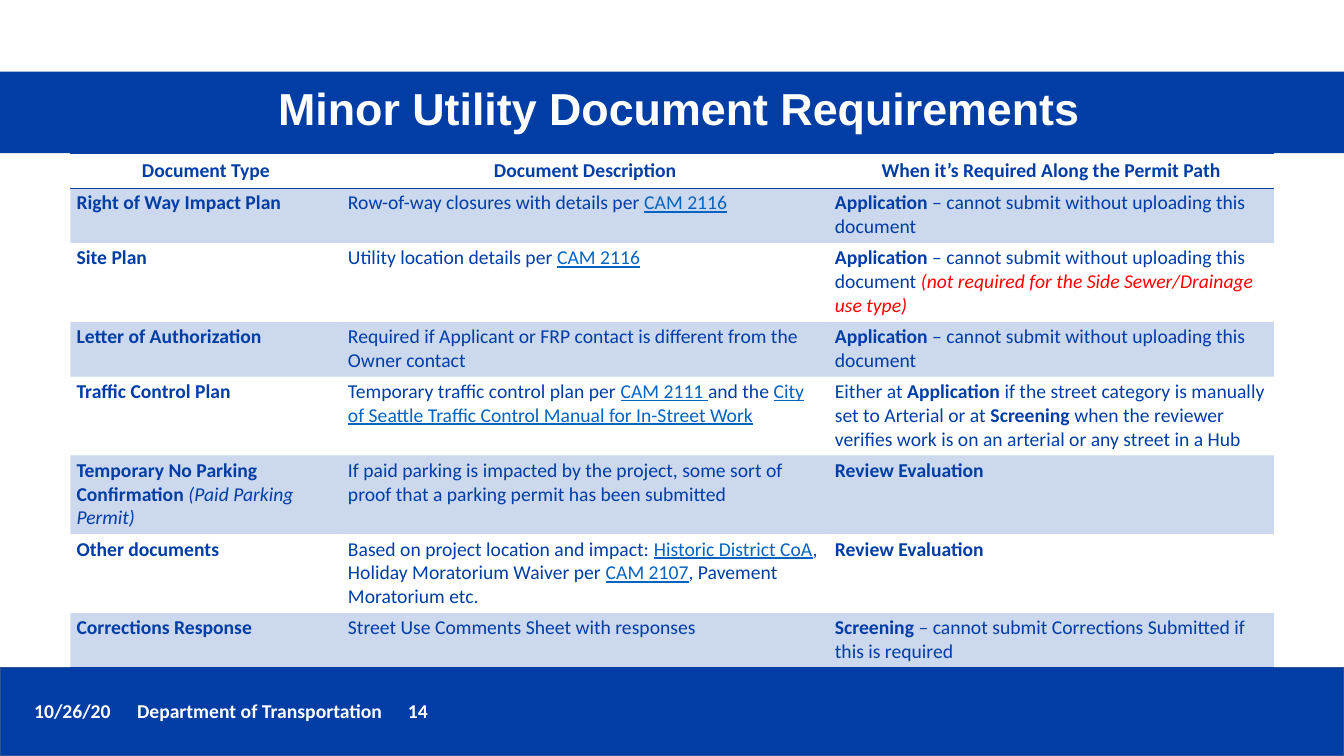
"""Builds the slide on minor utility document requirements."""
import pptx
import pptx.dml.color
import pptx.enum.shapes
import pptx.enum.text
import pptx.oxml
import pptx.oxml.ns
import pptx.util
from lxml import etree

Pt = pptx.util.Pt
ALIGN = pptx.enum.text.PP_ALIGN
MIDDLE = pptx.enum.text.MSO_ANCHOR.MIDDLE
FIXED = pptx.enum.text.MSO_AUTO_SIZE.NONE
COLORS = {"blue": "003DA5", "edge": "31538F", "link": "0563C1", "red": "FF0000", "white": "FFFFFF"}

TITLE = "Minor Utility Document Requirements"
FOOTER = "10/26/20\tDepartment of Transportation\t14"
STOPS = (73.5, 267)
NO_STYLE = "{2D5ABB26-0587-4C30-8999-92F81FD0307C}"

# STYLES_PLACEHOLDER
STYLES = {
    "bold": {"bold": True},
    "plain": {},
    "link": {"color": "link", "underline": True},
    "slant": {"italic": True},
    "note": {"color": "red", "italic": True},
}
HEADS = ("Document Type", "Document Description", "When it’s Required Along the Permit Path")
UPLOAD = [("bold", "Application"), ("plain", " – cannot submit without uploading this document")]
REVIEW = [("bold", "Review Evaluation")]
ROWS = [
    (2, [("bold", "Right of Way Impact Plan")],
     [("plain", "Row-of-way closures with details per "), ("link", "CAM 2116")],
     UPLOAD),
    (3, [("bold", "Site Plan")],
     [("plain", "Utility location details per "), ("link", "CAM 2116")],
     UPLOAD + [("plain", " "), ("note", "(not required for the Side Sewer/Drainage use type)")]),
    (2, [("bold", "Letter of Authorization")],
     [("plain", "Required if Applicant or FRP contact is different from the Owner contact")],
     UPLOAD),
    (3, [("bold", "Traffic Control Plan")],
     [("plain", "Temporary traffic control plan per "), ("link", "CAM 2111 "), ("plain", "and the "),
      ("link", "City of Seattle Traffic Control Manual for In-Street Work")],
     [("plain", "Either at "), ("bold", "Application"),
      ("plain", " if the street category is manually set to Arterial or at"), ("bold", " Screening "),
      ("plain", "when the reviewer verifies work is on an arterial or any street in a Hub")]),
    (3, [("bold", "Temporary No Parking Confirmation "), ("slant", "(Paid Parking Permit)")],
     [("plain", "If paid parking is impacted by the project, some sort of proof "
                "that a parking permit has been submitted")],
     REVIEW),
    (3, [("bold", "Other documents")],
     [("plain", "Based on project location and impact: "), ("link", "Historic District CoA"),
      ("plain", ", Holiday Moratorium Waiver per "), ("link", "CAM 2107"),
      ("plain", ", Pavement Moratorium etc.")],
     REVIEW),
    (2, [("bold", "Corrections Response")],
     [("plain", "Street Use Comments Sheet with responses")],
     [("bold", "Screening"), ("plain", " – cannot submit Corrections Submitted if this is required")]),
]

WIDE, HIGH = 960, 540
COLS = (193.9, 347.8, 318)
LEFT, TOP = 50.2, 109.4
HEAD, LINE, PAD = 25, 17.1, 5


def tint(name):
    return pptx.dml.color.RGBColor.from_string(COLORS[name])


def dress(run, size=14, font="Calibri", color="blue", bold=False, italic=False, underline=False):
    run.font.size, run.font.name = Pt(size), font
    run.font.bold, run.font.italic, run.font.underline = bold, italic, underline
    run.font.color.rgb = tint(color)


def add_bar(slide, top, high, edge=None):
    bar = slide.shapes.add_shape(
        pptx.enum.shapes.MSO_SHAPE.RECTANGLE, 0, Pt(top), Pt(WIDE), Pt(high))
    bar.shadow.inherit = False
    bar.fill.solid()
    bar.fill.fore_color.rgb = tint("blue")
    if edge:
        bar.line.color.rgb = tint(edge)
        bar.line.width = Pt(1)
    else:
        bar.line.fill.background()


def add_footer(slide):
    box = slide.shapes.add_textbox(Pt(17.3), Pt(496), Pt(724), Pt(24.2))
    box.text_frame.word_wrap = True
    para = box.text_frame.paragraphs[0]
    para.text = FOOTER
    for run in para.runs:
        dress(run, color="white", bold=True)
    tabs = etree.SubElement(para._p.get_or_add_pPr(), pptx.oxml.ns.qn("a:tabLst"))
    for stop in STOPS:
        etree.SubElement(tabs, pptx.oxml.ns.qn("a:tab"), pos=str(int(Pt(stop))), algn="l")


def place_title(slide):
    title = slide.shapes.title
    title.left, title.top, title.width, title.height = Pt(43.9), Pt(50.4), Pt(882.7), Pt(58.3)
    frame = title.text_frame
    frame.text = TITLE
    frame.auto_size, frame.vertical_anchor = FIXED, MIDDLE
    para = frame.paragraphs[0]
    para.alignment, para.line_spacing = ALIGN.CENTER, 0.9
    dress(para.runs[0], 32, "Arial", "white", True)
    slide.shapes._spTree.append(title._element)


def fill_cell(cell, parts):
    cell.margin_left = cell.margin_right = Pt(4.5)
    cell.margin_top = cell.margin_bottom = Pt(2.25)
    para = cell.text_frame.paragraphs[0]
    for style, text in parts:
        run = para.add_run()
        run.text = text
        dress(run, **STYLES[style])


def shade(cell):
    cell.fill.solid()
    cell.fill.fore_color.rgb = tint("blue")
    color = cell._tc.tcPr.find(".//" + pptx.oxml.ns.qn("a:srgbClr"))
    etree.SubElement(color, pptx.oxml.ns.qn("a:alpha"), val="20000")


def rule(cell, side):
    line = pptx.oxml.parse_xml(
        f'<a:{side} {pptx.oxml.ns.nsdecls("a")} w="{int(Pt(1))}"><a:solidFill>'
        f'<a:srgbClr val="{COLORS["blue"]}"/></a:solidFill></a:{side}>')
    cell._tc.get_or_add_tcPr().insert(0, line)


def add_grid(slide):
    highs = [HEAD] + [PAD + LINE * row[0] for row in ROWS]
    frame = slide.shapes.add_table(
        len(highs), len(COLS), Pt(LEFT), Pt(TOP), Pt(sum(COLS)), Pt(sum(highs)))
    grid = frame.table
    grid.horz_banding = False
    grid._tbl.tblPr.find(pptx.oxml.ns.qn("a:tableStyleId")).text = NO_STYLE
    for col, wide in zip(grid.columns, COLS):
        col.width = Pt(wide)
    for row, high in zip(grid.rows, highs):
        row.height = Pt(high)
    for c, head in enumerate(HEADS):
        cell = grid.cell(0, c)
        fill_cell(cell, [("bold", head)])
        cell.vertical_anchor = MIDDLE
        cell.text_frame.paragraphs[0].alignment = ALIGN.CENTER
        cell.fill.background()
        rule(cell, "lnB")
        rule(cell, "lnT")
    for r, (_, *cells) in enumerate(ROWS, 1):
        for c, parts in enumerate(cells):
            cell = grid.cell(r, c)
            fill_cell(cell, parts)
            if r % 2:
                shade(cell)
            else:
                cell.fill.background()
            if r == len(ROWS):
                rule(cell, "lnB")


def main():
    deck = pptx.Presentation()
    deck.slide_width, deck.slide_height = Pt(WIDE), Pt(HIGH)
    slide = deck.slides.add_slide(deck.slide_layouts[5])
    add_bar(slide, 476.6, 63.4, "edge")
    add_footer(slide)
    add_bar(slide, 51.1, 58.3)
    place_title(slide)
    add_grid(slide)
    deck.save("out.pptx")


if __name__ == "__main__":
    main()
